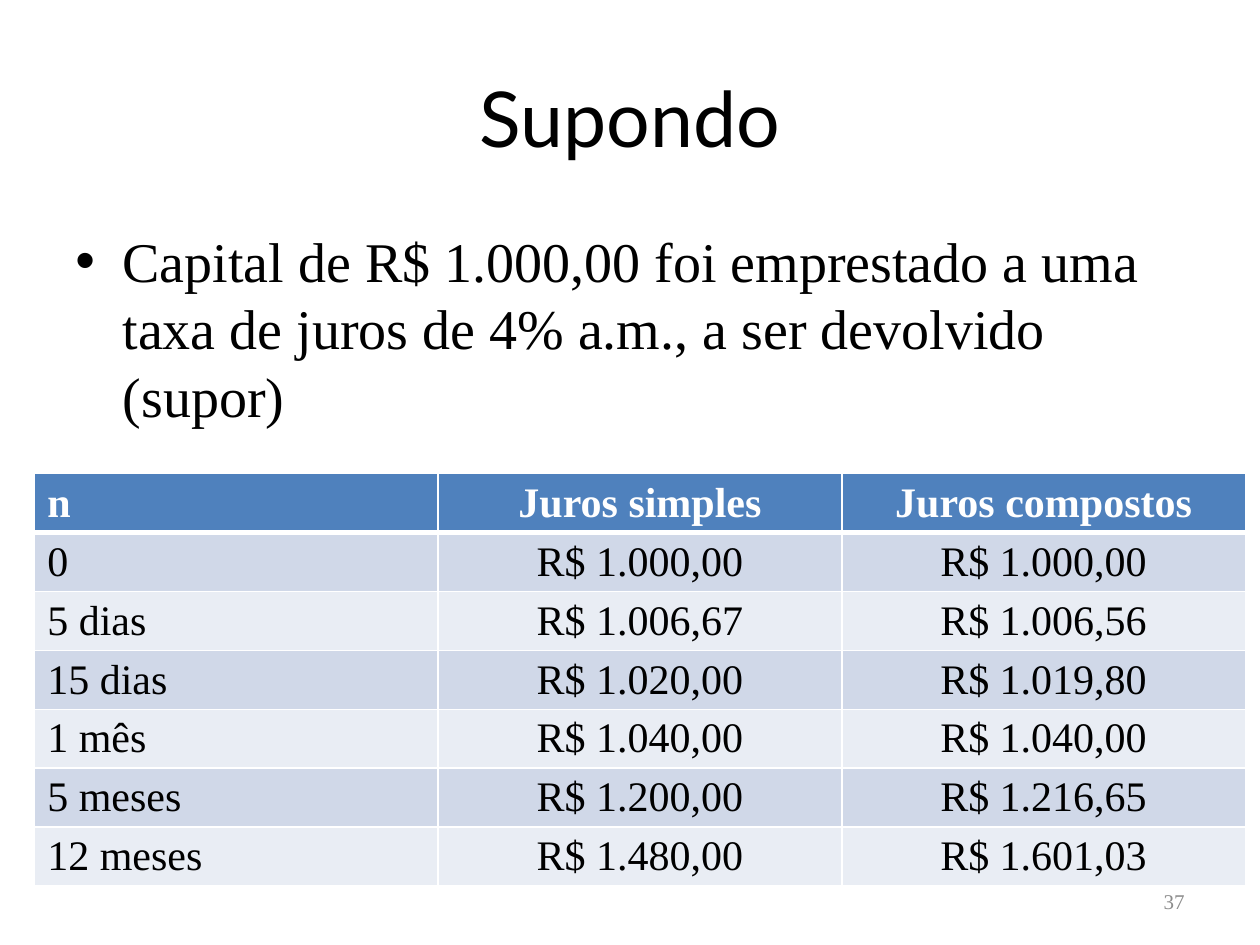
from lxml import etree
from pptx import Presentation
from pptx.dml.color import RGBColor
from pptx.enum.text import MSO_ANCHOR, PP_ALIGN
from pptx.oxml.ns import qn
from pptx.util import Pt

LEFT, CENTER, RIGHT = PP_ALIGN.LEFT, PP_ALIGN.CENTER, PP_ALIGN.RIGHT
TOP, MIDDLE = MSO_ANCHOR.TOP, MSO_ANCHOR.MIDDLE
SERIF = "Times New Roman"
WHITE, BLACK = "FFFFFF", "000000"


def style(para, size, color, font=SERIF, align=LEFT, bold=False):
    para.alignment = align
    for span in para.runs:
        span.font.size = Pt(size)
        span.font.name = font
        span.font.bold = bold
        span.font.color.rgb = RGBColor.from_string(color)


def add_text(left, top, width, height, text, anchor):
    box = page.shapes.add_textbox(Pt(left), Pt(top), Pt(width), Pt(height))
    box.text_frame.word_wrap = True
    box.text_frame.vertical_anchor = anchor
    box.text_frame.text = text
    return box.text_frame.paragraphs[0]


deck = Presentation()
deck.slide_width, deck.slide_height = Pt(720), Pt(540)
page = deck.slides.add_slide(deck.slide_layouts[6])

title = add_text(36, 21.6, 648, 90, "Supondo", MIDDLE)
style(title, 44, BLACK, font="Lato", align=CENTER)

body = add_text(
    36, 126, 648, 356.4,
    "Capital de R$ 1.000,00 foi emprestado a uma taxa de juros de 4% a.m., "
    "a ser devolvido (supor)", TOP)
style(body, 32, BLACK)
body_props = body._p.get_or_add_pPr()
body_props.set("marL", str(Pt(27)))
body_props.set("indent", str(-Pt(27)))
etree.SubElement(body_props, qn("a:buFont"), typeface="Arial")
etree.SubElement(body_props, qn("a:buChar"), char="•")

number = add_text(516, 500.5, 168, 28.75, "37", MIDDLE)
style(number, 12, "8C8C8C", align=RIGHT)

rows = [
    ("n", "Juros simples", "Juros compostos"),
    ("0", "R$ 1.000,00", "R$ 1.000,00"),
    ("5 dias", "R$ 1.006,67", "R$ 1.006,56"),
    ("15 dias", "R$ 1.020,00", "R$ 1.019,80"),
    ("1 mês", "R$ 1.040,00", "R$ 1.040,00"),
    ("5 meses", "R$ 1.200,00", "R$ 1.216,65"),
    ("12 meses", "R$ 1.480,00", "R$ 1.601,03"),
]
column_width, row_height = 230.6, 33.65
table = page.shapes.add_table(
    len(rows), 3, Pt(19.8), Pt(270.7),
    Pt(3 * column_width), Pt(len(rows) * row_height)).table
for column in table.columns:
    column.width = Pt(column_width)

for row_index, values in enumerate(rows):
    header = row_index == 0
    table.rows[row_index].height = Pt(row_height)
    fill = "4F81BD" if header else ("E9EDF4", "D0D8E8")[row_index % 2]
    widths = {
        "a:lnL": 1,
        "a:lnR": 1,
        "a:lnT": 3 if row_index == 1 else 1,
        "a:lnB": 3 if header else 1,
    }
    for column_index, value in enumerate(values):
        cell = table.cell(row_index, column_index)
        cell.margin_top, cell.margin_bottom = Pt(3.6), Pt(1)
        cell.text_frame.text = value
        style(cell.text_frame.paragraphs[0], 24, WHITE if header else BLACK,
              align=CENTER if column_index else LEFT, bold=header)
        cell.fill.solid()
        cell.fill.fore_color.rgb = RGBColor.from_string(fill)
        cell_props = cell._tc.get_or_add_tcPr()
        for position, (side, width) in enumerate(widths.items()):
            line = etree.Element(qn(side), w=str(Pt(width)))
            line_fill = etree.SubElement(line, qn("a:solidFill"))
            etree.SubElement(line_fill, qn("a:srgbClr"), val=WHITE)
            cell_props.insert(position, line)

deck.save("out.pptx")
